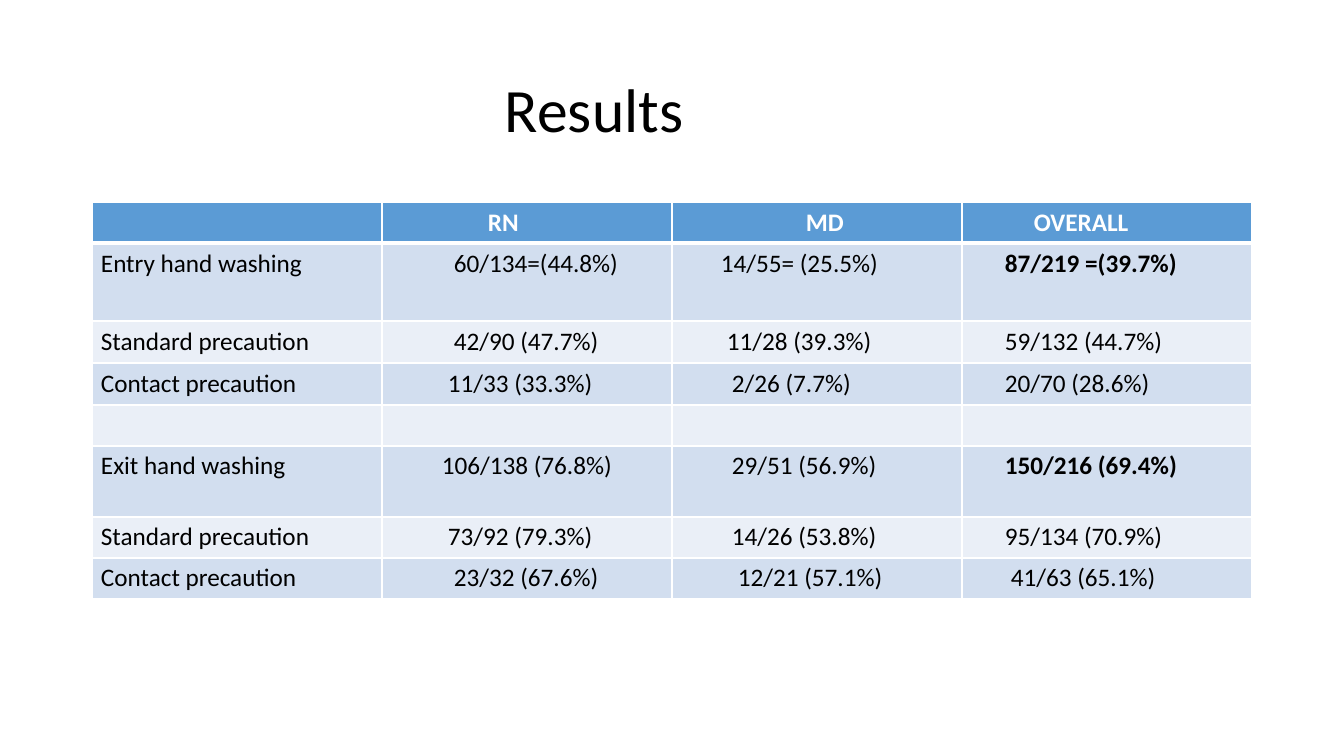
from dataclasses import dataclass

from lxml import etree
from pptx import Presentation
from pptx.dml.color import RGBColor
from pptx.enum.text import MSO_ANCHOR, PP_ALIGN
from pptx.oxml.ns import qn
from pptx.util import Emu, Pt

EMU_PER_INCH = 914400
PX_PER_INCH = 100.8
LEFT = PP_ALIGN.LEFT
MIDDLE = MSO_ANCHOR.MIDDLE

FONT = "Calibri"
BLACK = RGBColor(0x00, 0x00, 0x00)
WHITE = RGBColor(0xFF, 0xFF, 0xFF)
HEADER_BLUE = RGBColor(0x5B, 0x9B, 0xD5)
BAND_DARK = RGBColor(0xD2, 0xDE, 0xEF)
BAND_LIGHT = RGBColor(0xEA, 0xEF, 0xF7)

COLUMN_WIDTH = 290
CELL_MARGIN = 9


@dataclass(frozen=True)
class Entry:
    text: str = ""
    indent: int = CELL_MARGIN
    bold: bool = False


@dataclass(frozen=True)
class Row:
    height: int
    entries: tuple[Entry, ...]


ROWS = (
    Row(41, (Entry(), Entry("RN", 106, True), Entry("MD", 134, True),
             Entry("OVERALL", 72, True))),
    Row(78, (Entry("Entry hand washing"), Entry("60/134=(44.8%)", 72),
             Entry("14/55= (25.5%)", 49), Entry("87/219 =(39.7%)", 43, True))),
    Row(42, (Entry("Standard precaution"), Entry("42/90 (47.7%)", 72),
             Entry("11/28 (39.3%)", 55), Entry("59/132 (44.7%)", 43))),
    Row(42, (Entry("Contact precaution"), Entry("11/33 (33.3%)", 66),
             Entry("2/26 (7.7%)", 60), Entry("20/70 (28.6%)", 43))),
    Row(41, (Entry(),) * 4),
    Row(71, (Entry("Exit hand washing"), Entry("106/138 (76.8%)", 60),
             Entry("29/51 (56.9%)", 60), Entry("150/216 (69.4%)", 43, True))),
    Row(41, (Entry("Standard precaution"), Entry("73/92 (79.3%)", 66),
             Entry("14/26 (53.8%)", 60), Entry("95/134 (70.9%)", 43))),
    Row(41, (Entry("Contact precaution"), Entry("23/32 (67.6%)", 72),
             Entry("12/21 (57.1%)", 66), Entry("41/63 (65.1%)", 49))),
)


def px(n: int) -> Emu:
    return Emu(round(n * EMU_PER_INCH / PX_PER_INCH))


def format_font(font, size: int, color: RGBColor, bold: bool = False) -> None:
    font.name = FONT
    font.size = Pt(size)
    font.bold = bold
    font.color.rgb = color


def add_borders(cell, top: int, bottom: int) -> None:
    """Draw white cell borders; widths are in points."""
    tc_pr = cell._tc.get_or_add_tcPr()
    for side, width in (("L", 1), ("R", 1), ("T", top), ("B", bottom)):
        ln = etree.SubElement(tc_pr, qn(f"a:ln{side}"), w=str(Pt(width)))
        fill = etree.SubElement(ln, qn("a:solidFill"))
        etree.SubElement(fill, qn("a:srgbClr"), val=str(WHITE))


def fill_cell(cell, entry: Entry, row_index: int) -> None:
    is_header = row_index == 0
    add_borders(cell, 3 if row_index == 1 else 1, 3 if is_header else 1)
    cell.fill.solid()
    band = BAND_DARK if row_index % 2 else BAND_LIGHT
    cell.fill.fore_color.rgb = HEADER_BLUE if is_header else band
    cell.margin_left = px(entry.indent)
    if entry.text:
        cell.text_frame.text = entry.text
        r = cell.text_frame.paragraphs[0].runs[0]
        format_font(r.font, 18, WHITE if is_header else BLACK, entry.bold)


def add_results_table(slide) -> None:
    columns = len(ROWS[0].entries)
    height = sum(row.height for row in ROWS)
    table = slide.shapes.add_table(
        len(ROWS), columns, px(92), px(202),
        px(COLUMN_WIDTH * columns), px(height)).table
    for column in table.columns:
        column.width = px(COLUMN_WIDTH)
    for i, row in enumerate(ROWS):
        table.rows[i].height = px(row.height)
        for j, entry in enumerate(row.entries):
            fill_cell(table.cell(i, j), entry, i)


def set_title(slide) -> None:
    title = slide.shapes.title
    title.left, title.top = px(92), px(40)
    title.width, title.height = px(1159), px(146)
    tf = title.text_frame
    tf.text = "Results"
    tf.vertical_anchor = MIDDLE
    tf.margin_left = px(413)
    p = tf.paragraphs[0]
    p.alignment = LEFT
    p.line_spacing = 0.9
    format_font(p.runs[0].font, 44, BLACK)


def main() -> None:
    prs = Presentation()
    prs.slide_width, prs.slide_height = px(1344), px(756)
    slide = prs.slides.add_slide(prs.slide_layouts.get_by_name("Title Only"))
    set_title(slide)
    add_results_table(slide)
    prs.save("out.pptx")


if __name__ == "__main__":
    main()
